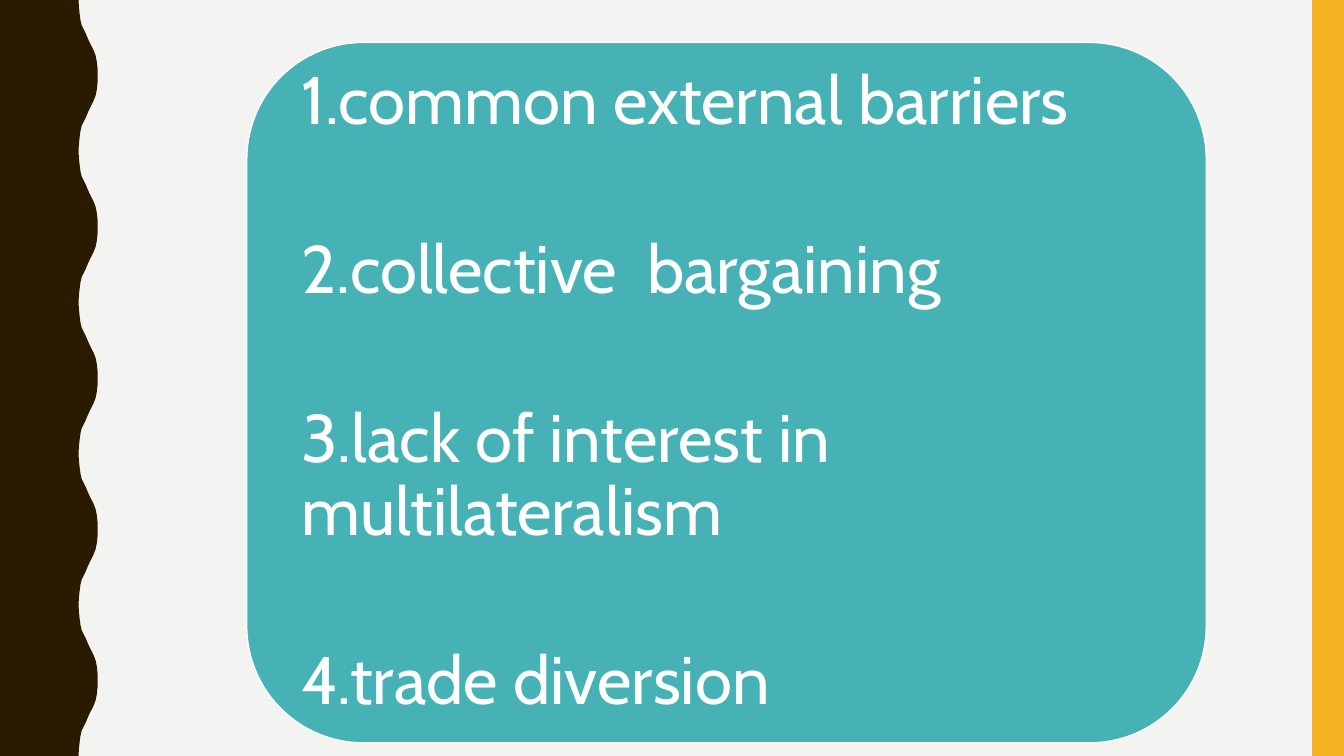
import pptx
import pptx.util
import pptx.dml.color
import pptx.enum.shapes
import pptx.enum.text

Cm = pptx.util.Cm
Pt = pptx.util.Pt
SHAPE = pptx.enum.shapes.MSO_SHAPE

COLORS = {
    "page": "F3F3F2",
    "wave": "2A1A00",
    "strip": "F8B323",
    "card": "46B2B5",
    "white": "FFFFFF",
}
WIDE, HIGH = 33.87, 19.05
WAVES = 5
PERIOD = HIGH / WAVES

# Edge of half a wave, from trough to crest, in cm
HALF = [
    (1.98, 0), (1.99, 0.18), (2.01, 0.36), (2.03, 0.51), (2.06, 0.64),
    (2.11, 0.74), (2.16, 0.84), (2.21, 0.96), (2.26, 1.07), (2.31, 1.17),
    (2.36, 1.27), (2.41, 1.4), (2.44, 1.55), (2.46, 1.73), (2.46, 1.9),
]
ITEMS = [
    "1.common external barriers",
    "2.collective  bargaining",
    "3.lack of interest in multilateralism",
    "4.trade diversion",
]


def color(name):
    return pptx.dml.color.RGBColor.from_string(COLORS[name])


def paint(fill, name):
    fill.solid()
    fill.fore_color.rgb = color(name)


def style(shape, name, edge=None):
    shape.shadow.inherit = False
    paint(shape.fill, name)
    if edge:
        shape.line.color.rgb = color(edge)
        shape.line.width = Pt(1)
    else:
        shape.line.fill.background()


def add_wave(slide):
    back = [(x, PERIOD - y) for x, y in reversed(HALF)]
    edge = [(x, y + n * PERIOD) for n in range(WAVES) for x, y in HALF + back]
    points = [(Cm(x), Cm(y)) for x, y in edge + [(0, HIGH)]]
    form = slide.shapes.build_freeform(0, 0)
    form.add_line_segments(points, close=True)
    style(form.convert_to_shape(), "wave")


def add_box(slide, kind, place, fill, edge=None):
    box = slide.shapes.add_shape(kind, *[Cm(n) for n in place])
    style(box, fill, edge)
    return box


def add_list(box, items):
    frame = box.text_frame
    frame.word_wrap = True
    frame.vertical_anchor = pptx.enum.text.MSO_ANCHOR.MIDDLE
    frame.margin_left = frame.margin_right = Cm(0.51)
    frame.margin_top = frame.margin_bottom = Cm(0.51)
    for i, item in enumerate(items):
        para = frame.add_paragraph() if i else frame.paragraphs[0]
        para.text = item
        para.alignment = pptx.enum.text.PP_ALIGN.LEFT
        para.line_spacing = 0.9
        para.space_before = Pt(69 if i else 0)
        para.font.name = "Cabin"
        para.font.size = Pt(48)
        para.font.color.rgb = color("white")


def main():
    deck = pptx.Presentation()
    deck.slide_width, deck.slide_height = Cm(WIDE), Cm(HIGH)
    slide = deck.slides.add_slide(deck.slide_layouts[6])
    paint(slide.background.fill, "page")

    # Side decoration
    add_wave(slide)
    add_box(slide, SHAPE.RECTANGLE, (33.07, 0, 0.8, HIGH), "strip")

    # Card with the numbered points
    card = add_box(slide, SHAPE.ROUNDED_RECTANGLE,
                   (6.22, 1.07, 24.18, 17.65), "card", "white")
    add_list(card, ITEMS)

    deck.save("out.pptx")


if __name__ == "__main__":
    main()
